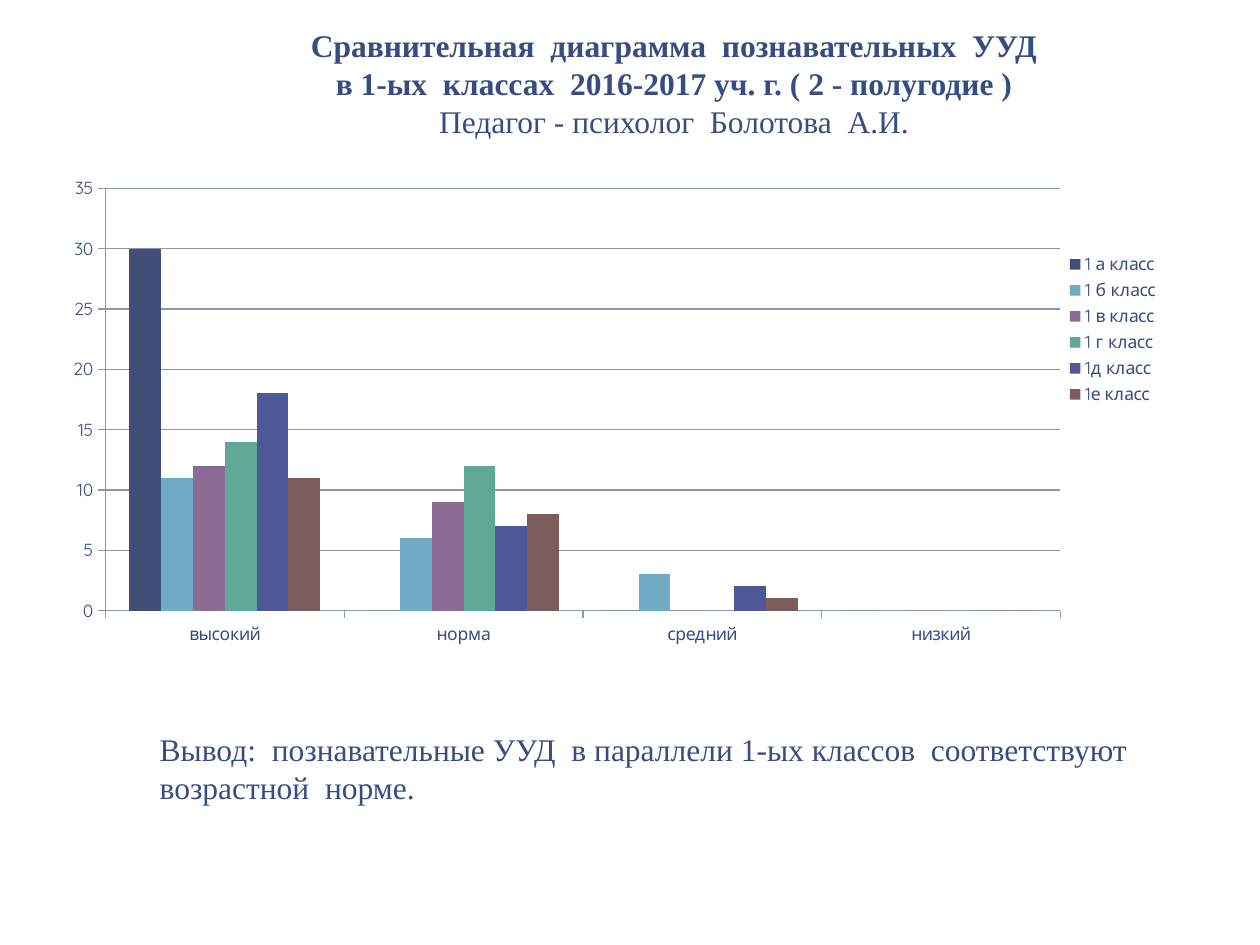
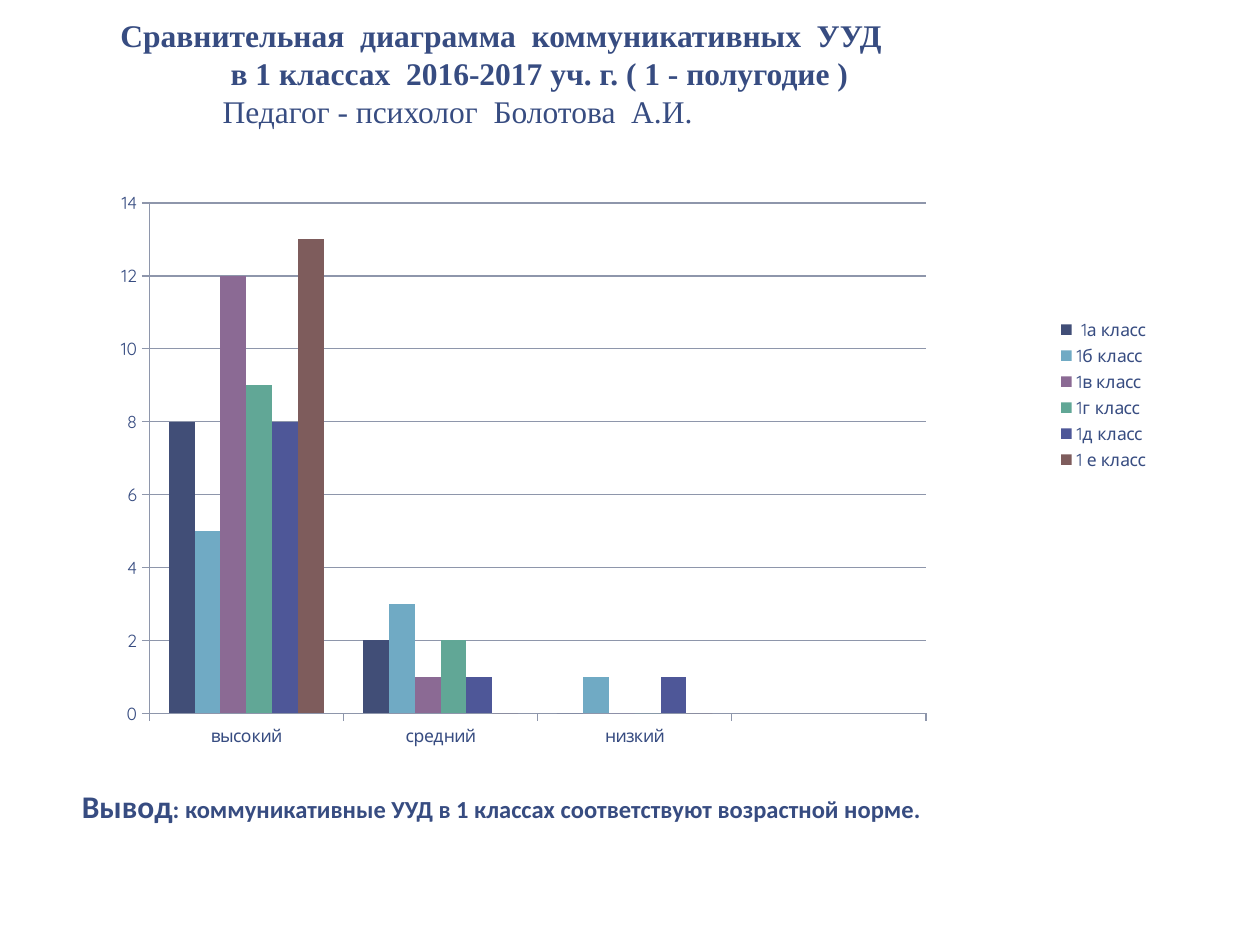
from lxml import etree
from pptx import Presentation
from pptx.chart.data import CategoryChartData
from pptx.dml.color import RGBColor
from pptx.enum.chart import XL_CHART_TYPE as ChartType, XL_LEGEND_POSITION as LegendPos
from pptx.enum.chart import XL_TICK_MARK as Tick
from pptx.enum.text import MSO_ANCHOR as Anchor, PP_ALIGN as Align
from pptx.oxml.ns import qn
from pptx.util import Cm, Pt

# Shared style
COLORS = {
    "text": "374C81",
    "grid": "8E96AB",
    "а": "414E77",
    "б": "70AAC4",
    "в": "8B6A94",
    "г": "61A796",
    "д": "4E5798",
    "е": "7E5C5C",
}
CLASSES = "абвгде"
SERIF, SANS, CHART_FONT = "Times New Roman", "Calibri", "Quicksand"
SLIDE_W, SLIDE_H = 25.4, 19.05
AUTHOR = "Педагог - психолог  Болотова  А.И."


def rgb(name):
    return RGBColor.from_string(COLORS[name])


def style(font, size=18, name=SERIF, bold=False):
    font.size, font.name, font.bold = Pt(size), name, bold
    font.color.rgb = rgb("text")


def add_text_box(slide, left, top, height):
    """Text area that runs to the right edge of the slide."""
    sp = slide.shapes.add_textbox(Cm(left), Cm(top), Cm(SLIDE_W - left), Cm(height))
    tf = sp.text_frame
    tf.word_wrap = True
    tf.vertical_anchor = Anchor.TOP
    return tf


def add_title(slide, left, top, lines, align=Align.LEFT, indents=(0, 0, 0)):
    """Bold heading lines followed by the author in regular weight."""
    tf = add_text_box(slide, left, top, 3.33)
    for i, (line, indent) in enumerate(zip([*lines, AUTHOR], indents)):
        p = tf.add_paragraph() if i else tf.paragraphs[0]
        p.text = line
        p.alignment = align
        if indent:
            p._p.get_or_add_pPr().set("marL", str(Cm(indent)))
        style(p.font, bold=i < len(lines))


def add_conclusion(slide, left, top, height, runs, name, bold):
    """One paragraph built from (text, size) runs."""
    p = add_text_box(slide, left, top, height).paragraphs[0]
    for text, size in runs:
        r = p.add_run()
        r.text = text
        style(r.font, size, name, bold)


def set_plot_layout(chart, x, y, w, h):
    """Fix the inner plot area as fractions of the chart."""
    plot_area = chart._chartSpace.chart.plotArea
    for old in plot_area.findall(qn("c:layout")):
        plot_area.remove(old)
    layout = etree.Element(qn("c:layout"))
    manual = etree.SubElement(layout, qn("c:manualLayout"))
    settings = {"layoutTarget": "inner", "xMode": "edge", "yMode": "edge",
                "x": x, "y": y, "w": w, "h": h}
    for tag, val in settings.items():
        etree.SubElement(manual, qn(f"c:{tag}")).set("val", str(val))
    plot_area.insert(0, layout)


def add_level_chart(slide, box, plot_box, levels, series, top_value, step):
    """Clustered columns: one series per class, one group per level."""
    data = CategoryChartData()
    data.categories = levels
    for name, values in series:
        data.add_series(name, values)
    chart = slide.shapes.add_chart(
        ChartType.COLUMN_CLUSTERED, *map(Cm, box), data).chart
    style(chart.font, 10, CHART_FONT)
    chart.has_title = False
    chart.has_legend = True
    chart.legend.position = LegendPos.RIGHT
    chart.legend.include_in_layout = False
    set_plot_layout(chart, *plot_box)

    plot = chart.plots[0]
    plot.gap_width, plot.overlap = 150, 0
    plot.vary_by_categories = False
    for letter, ser in zip(CLASSES, plot.series):
        ser.format.fill.solid()
        ser.format.fill.fore_color.rgb = rgb(letter)
        ser.invert_if_negative = False

    val_axis = chart.value_axis
    val_axis.minimum_scale, val_axis.maximum_scale = 0, top_value
    val_axis.major_unit = step
    val_axis.has_major_gridlines = True
    for axis in (chart.category_axis, val_axis):
        axis.major_tick_mark, axis.minor_tick_mark = Tick.OUTSIDE, Tick.NONE
    for part in (chart.category_axis, val_axis, val_axis.major_gridlines):
        part.format.line.color.rgb = rgb("grid")
        part.format.line.width = Pt(0.75)


def build_cognitive(slide):
    add_title(slide, 1.78, 0.41,
              ["Сравнительная  диаграмма  познавательных  УУД",
               "в 1-ых  классах  2016-2017 уч. г. ( 2 - полугодие )"],
              align=Align.CENTER)
    add_level_chart(
        slide, (0, 0, 23.62, 13.28), (0.09, 0.286, 0.815, 0.641),
        ["высокий", "норма", "средний", "низкий"],
        [("1 а класс", (30, 0, 0, 0)),
         ("1 б класс", (11, 6, 3, 0)),
         ("1 в класс", (12, 9, 0, 0)),
         ("1 г класс", (14, 12, 0, 0)),
         ("1д класс", (18, 7, 2, 0)),
         ("1е класс", (11, 8, 1, 0))],
        top_value=35, step=5)
    add_conclusion(
        slide, 2.97, 14.6, 2.57,
        [("Вывод:  познавательные УУД  в параллели 1-ых классов  "
          "соответствуют  возрастной  норме.", 18)],
        SERIF, bold=False)


def build_communicative(slide):
    add_title(slide, 2.18, 0.2,
              ["Сравнительная  диаграмма  коммуникативных  УУД",
               "в 1 классах  2016-2017 уч. г. ( 1 - полугодие )"],
              indents=(0, 2.22, 2.06))
    # The last group on the axis is unnamed and has no values
    add_level_chart(
        slide, (0.79, 0.41, 22.63, 15.09), (0.098, 0.244, 0.692, 0.682),
        ["высокий", "средний", "низкий", ""],
        [(" 1а класс", (8, 2, 0, None)),
         ("1б класс", (5, 3, 1, None)),
         ("1в класс", (12, 1, 0, None)),
         ("1г класс", (9, 2, 0, None)),
         ("1д класс", (8, 1, 1, None)),
         ("1 е класс", (13, 0, 0, None))],
        top_value=14, step=2)
    add_conclusion(
        slide, 1.4, 15.75, 1.8,
        [("Вывод", 18),
         (": коммуникативные УУД в 1 классах соответствуют возрастной норме.", 14)],
        SANS, bold=True)


def main():
    prs = Presentation()
    prs.slide_width, prs.slide_height = Cm(SLIDE_W), Cm(SLIDE_H)
    blank = prs.slide_layouts[6]
    for build in (build_cognitive, build_communicative):
        build(prs.slides.add_slide(blank))
    prs.save("out.pptx")


if __name__ == "__main__":
    main()
